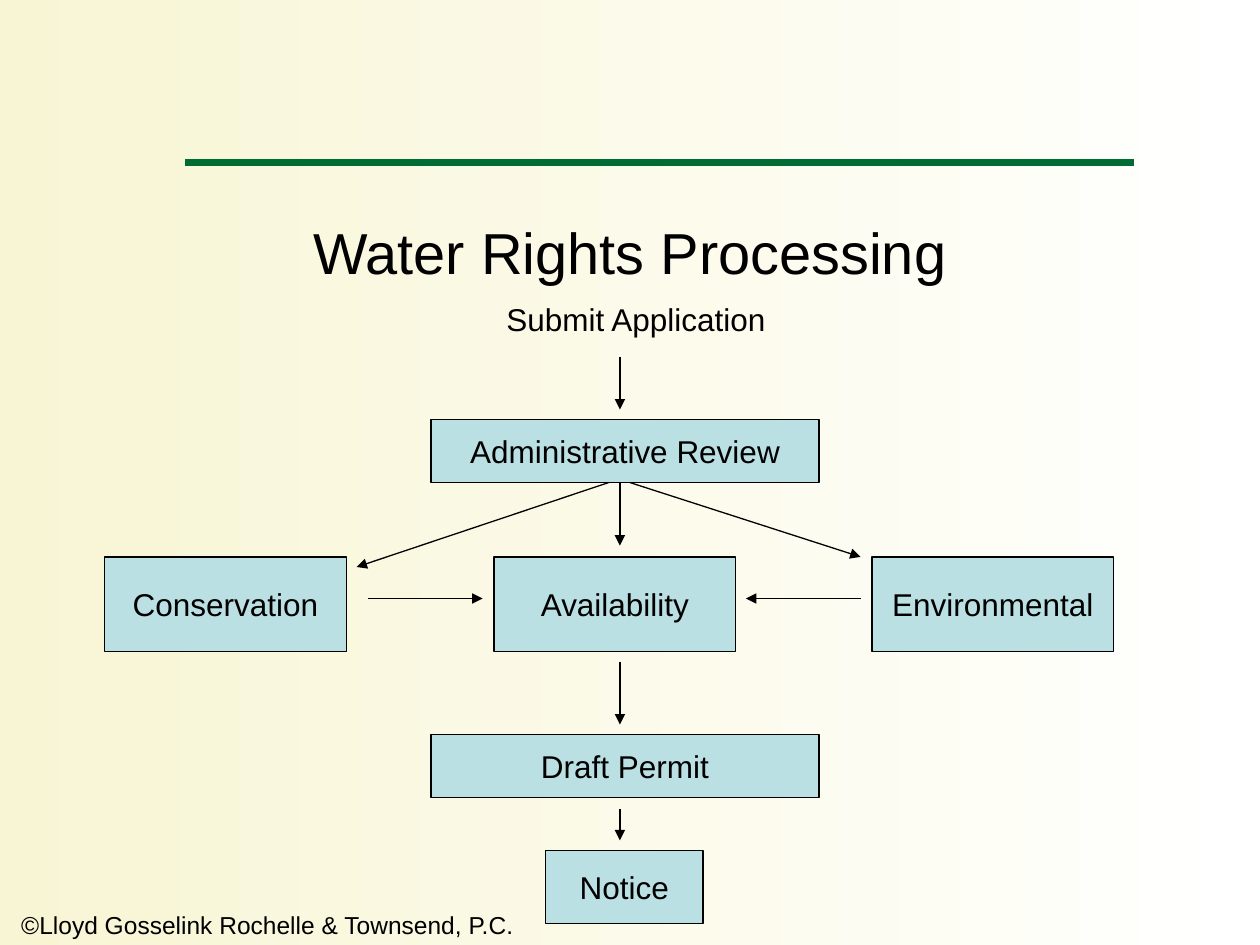
from typing import NamedTuple

from lxml import etree
from pptx import Presentation
from pptx.dml.color import RGBColor
from pptx.enum.shapes import MSO_CONNECTOR, MSO_SHAPE
from pptx.enum.text import MSO_ANCHOR, PP_ALIGN
from pptx.oxml.ns import qn
from pptx.util import Inches, Pt

BLACK = RGBColor(0x00, 0x00, 0x00)
GREEN = RGBColor(0x00, 0x6B, 0x32)
BLUE = RGBColor(0xBB, 0xE0, 0xE3)
CREAM = RGBColor(0xF8, 0xF5, 0xD4)
WHITE = RGBColor(0xFF, 0xFF, 0xFF)

RECT = MSO_SHAPE.RECTANGLE
STRAIGHT = MSO_CONNECTOR.STRAIGHT
LEFT, CENTER = PP_ALIGN.LEFT, PP_ALIGN.CENTER
TOP, MIDDLE = MSO_ANCHOR.TOP, MSO_ANCHOR.MIDDLE

FONT = "Arial"
MID = 4.92  # x of the central flow


class Box(NamedTuple):
    text: str
    left: float
    top: float
    width: float
    height: float


class Arrow(NamedTuple):
    x1: float
    y1: float
    x2: float
    y2: float


STEPS = [
    Box("Administrative Review", 3.42, 3.33, 3.08, 0.5),
    *(Box(name, 0.83 + 3.045 * i if i == 2 else (0.83, 3.92)[i], 4.42, 1.92, 0.75)
      for i, name in enumerate(("Conservation", "Availability", "Environmental"))),
    Box("Draft Permit", 3.42, 5.83, 3.08, 0.5),
    Box("Notice", 4.33, 6.75, 1.25, 0.58),
]

# Downward arrows, then the two branches, then the side inputs
ARROWS = [
    *(Arrow(MID, y1, MID, y2) for y1, y2 in
      ((2.83, 3.25), (3.83, 4.33), (5.25, 5.75), (6.42, 6.67))),
    Arrow(4.83, 3.83, 2.83, 4.5),
    Arrow(5, 3.83, 6.83, 4.42),
    Arrow(2.92, 4.75, 3.83, 4.75),
    Arrow(6.83, 4.75, 5.92, 4.75),
]


def put_text(shape, text: str, *, size: float = 18, align=LEFT,
             anchor=TOP, wrap: bool = True) -> None:
    frame = shape.text_frame
    frame.word_wrap = wrap
    frame.vertical_anchor = anchor
    para = frame.paragraphs[0]
    para.alignment = align
    run = para.add_run()
    run.text = text
    run.font.name = FONT
    run.font.size = Pt(size)
    run.font.color.rgb = BLACK


def add_label(slide, box: Box, **style) -> None:
    area = slide.shapes.add_textbox(*map(Inches, box[1:]))
    put_text(area, box.text, **style)


def add_step(slide, box: Box) -> None:
    shape = slide.shapes.add_shape(RECT, *map(Inches, box[1:]))
    shape.shadow.inherit = False
    shape.fill.solid()
    shape.fill.fore_color.rgb = BLUE
    shape.line.color.rgb = BLACK
    shape.line.width = Pt(0.75)
    put_text(shape, box.text, align=CENTER, anchor=MIDDLE, wrap=False)


def add_line(slide, ends: Arrow, color: RGBColor = BLACK,
             width: float = 0.75, head: bool = True) -> None:
    line = slide.shapes.add_connector(STRAIGHT, *map(Inches, ends))
    line.line.color.rgb = color
    line.line.width = Pt(width)
    if head:
        etree.SubElement(line.line._get_or_add_ln(), qn("a:tailEnd"), type="triangle")
    etree.SubElement(line._element.spPr, qn("a:effectLst"))


def main() -> None:
    deck = Presentation()
    deck.slide_width, deck.slide_height = Inches(10), Inches(7.5)
    slide = deck.slides.add_slide(deck.slide_layouts[6])

    # Background
    fill = slide.background.fill
    fill.gradient()
    fill.gradient_angle = 0
    for stop, color, place in zip(fill.gradient_stops, (CREAM, WHITE), (0, 1)):
        stop.color.rgb = color
        stop.position = place

    # Footer, rule and headings
    add_label(slide, Box("©Lloyd Gosselink Rochelle & Townsend, P.C.",
                         0.07, 7.17, 4.92, 0.33), size=14)
    add_line(slide, Arrow(1.47, 1.29, 9, 1.29), color=GREEN, width=3.5, head=False)
    add_label(slide, Box("Water Rights Processing", 0.5, 1.58, 9, 0.83),
              size=33, align=CENTER, anchor=MIDDLE)
    add_label(slide, Box("Submit Application", 3.92, 2.33, 2.83, 0.85))

    # Flow chart
    for step in STEPS:
        add_step(slide, step)
    for arrow in ARROWS:
        add_line(slide, arrow)

    deck.save("out.pptx")


if __name__ == "__main__":
    main()
